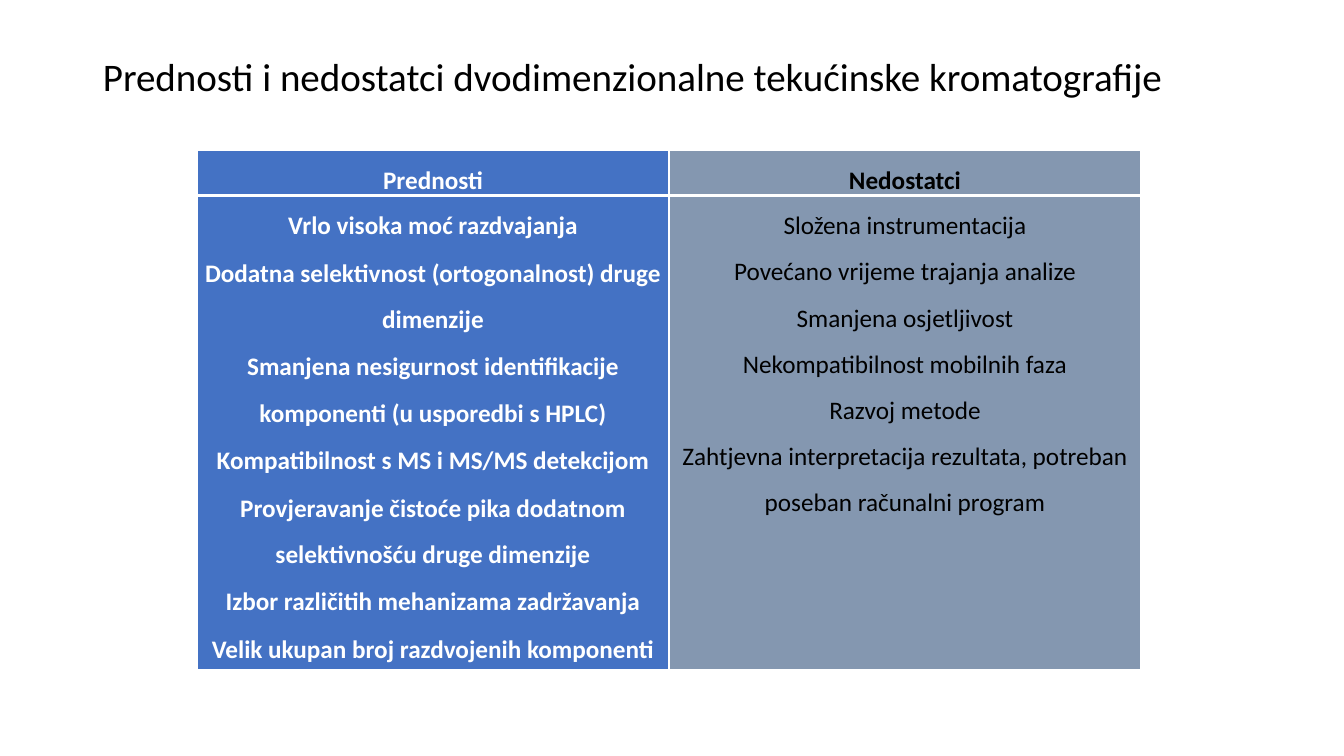
from lxml import etree
from pptx import Presentation
from pptx.dml.color import RGBColor
from pptx.enum.text import MSO_ANCHOR, PP_ALIGN
from pptx.oxml.ns import qn
from pptx.util import Pt

PX = 914400 / 100.8
TOP = MSO_ANCHOR.TOP
CENTER = PP_ALIGN.CENTER
FONT = "Calibri"
WHITE, BLACK, BLUE, GREY = "FFFFFF", "000000", "4472C4", "8497B0"

TITLE = "Prednosti i nedostatci dvodimenzionalne tekućinske kromatografije"
ADVANTAGES = [
    "Vrlo visoka moć razdvajanja",
    "Dodatna selektivnost (ortogonalnost) druge dimenzije",
    "Smanjena nesigurnost identifikacije komponenti (u usporedbi s HPLC)",
    "Kompatibilnost s MS i MS/MS detekcijom",
    "Provjeravanje čistoće pika dodatnom selektivnošću druge dimenzije",
    "Izbor različitih mehanizama zadržavanja",
    "Velik ukupan broj razdvojenih komponenti",
]
DRAWBACKS = [
    "Složena instrumentacija",
    "Povećano vrijeme trajanja analize",
    "Smanjena osjetljivost",
    "Nekompatibilnost mobilnih faza",
    "Razvoj metode",
    "Zahtjevna interpretacija rezultata, potreban poseban računalni program",
]


def px(length):
    return round(length * PX)


def color(value):
    return RGBColor.from_string(value)


def style_font(font, size, ink, bold=False):
    font.name = FONT
    font.size = Pt(size)
    font.bold = bold
    font.color.rgb = color(ink)


def add_title(page, text):
    box = page.shapes.add_textbox(px(93), px(40), px(1159), px(146))
    frame = box.text_frame
    frame.word_wrap = True
    frame.vertical_anchor = TOP
    frame.margin_top = px(18)
    para = frame.paragraphs[0]
    para.text = text
    para.line_spacing = 0.9
    style_font(para.font, 27.9, BLACK)


def set_borders(cell, bottom_width):
    properties = cell._tc.get_or_add_tcPr()
    widths = {"a:lnL": 1, "a:lnR": 1, "a:lnT": 1, "a:lnB": bottom_width}
    for position, (side, width) in enumerate(widths.items()):
        line = etree.Element(qn(side), w=str(Pt(width)))
        fill = etree.SubElement(line, qn("a:solidFill"))
        etree.SubElement(fill, qn("a:srgbClr"), val=WHITE)
        properties.insert(position, line)


def fill_cell(cell, lines, fill, ink, bold, space_before, bottom_width):
    cell.fill.solid()
    cell.fill.fore_color.rgb = color(fill)
    set_borders(cell, bottom_width)
    cell.margin_left = cell.margin_right = px(7)
    cell.margin_top = cell.margin_bottom = 0
    cell.vertical_anchor = TOP
    cell.text = "\n".join(lines)
    for para in cell.text_frame.paragraphs:
        para.alignment = CENTER
        para.line_spacing = 1.5
        para.space_before = Pt(space_before)
        style_font(para.font, 18, ink, bold)


def add_comparison(page):
    frame = page.shapes.add_table(2, 2, px(197), px(150), px(944), px(515))
    table = frame.table
    for column in table.columns:
        column.width = px(472)
    for row, height in zip(table.rows, (41, 474)):
        row.height = px(height)
    columns = [
        ("Prednosti", ADVANTAGES, BLUE, WHITE, True, 1),
        ("Nedostatci", DRAWBACKS, GREY, BLACK, False, 0),
    ]
    for index, (heading, lines, fill, ink, bold, space) in enumerate(columns):
        fill_cell(table.cell(0, index), [heading], fill, ink, True, 1, 3)
        fill_cell(table.cell(1, index), lines, fill, ink, bold, space, 1)
    for index in range(len(columns)):
        top_line = table.cell(1, index)._tc.tcPr.find(qn("a:lnT"))
        top_line.set("w", str(Pt(3)))


def main():
    deck = Presentation()
    deck.slide_width = px(1344)
    deck.slide_height = px(756)
    page = deck.slides.add_slide(deck.slide_layouts[6])
    add_title(page, TITLE)
    add_comparison(page)
    deck.save("out.pptx")


if __name__ == "__main__":
    main()
